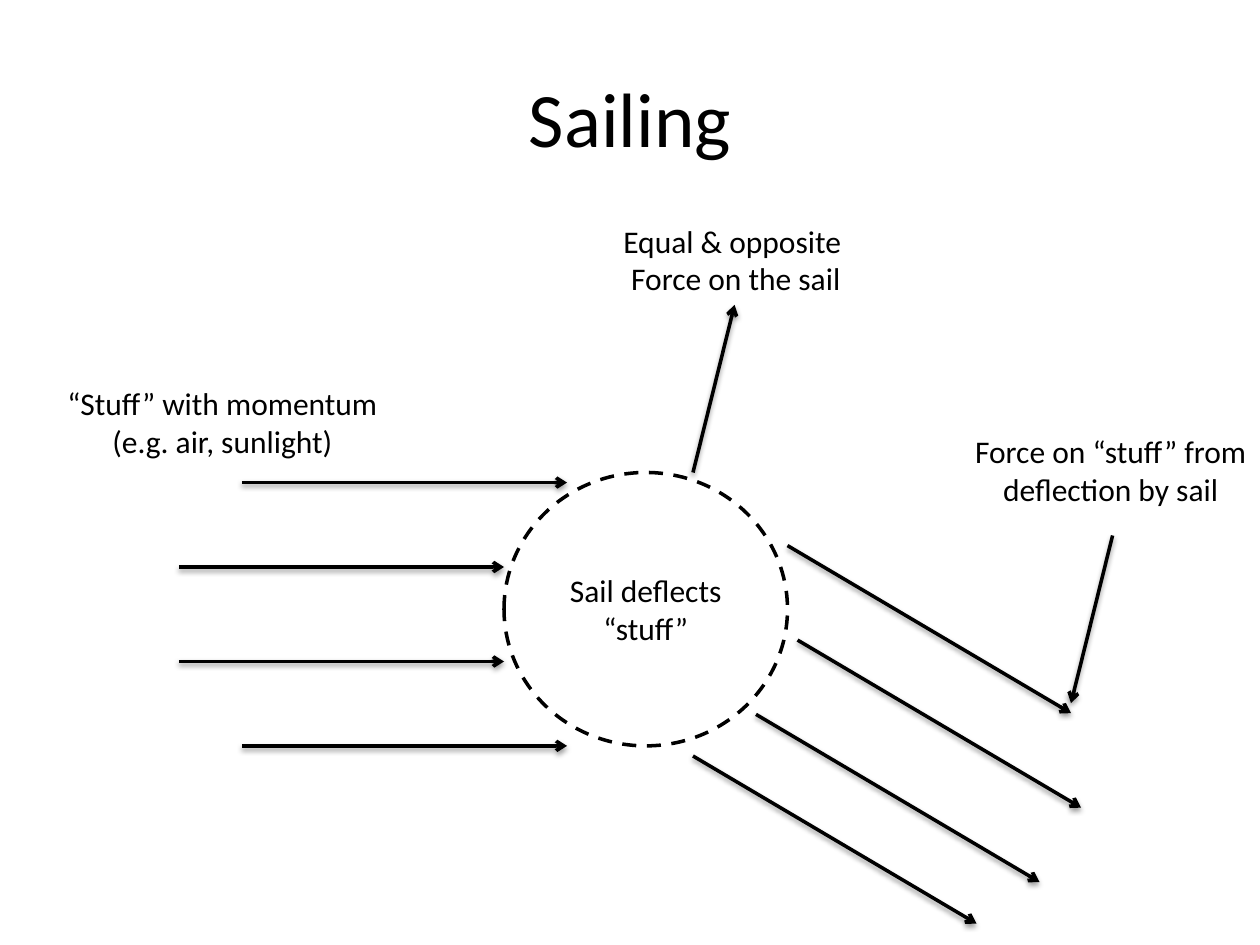
from lxml import etree
from pptx import Presentation
from pptx import util as u
from pptx.dml.color import RGBColor
from pptx.enum import dml, shapes, text
from pptx.oxml import ns

BLACK = RGBColor(0x00, 0x00, 0x00)
WHITE = RGBColor(0xFF, 0xFF, 0xFF)
FONT = "Calibri"
LINE_WIDTH = u.Pt(2)


def add_element(parent, tag, **attributes):
    """Append a DrawingML element to its parent."""
    return etree.SubElement(parent, ns.qn(tag), **attributes)


def format_text(frame, size):
    """Centre every paragraph and give it the slide's font."""
    for paragraph in frame.paragraphs:
        paragraph.alignment = text.PP_ALIGN.CENTER
        for run in paragraph.runs:
            run.font.name = FONT
            run.font.size = u.Pt(size)
            run.font.color.rgb = BLACK


def add_title(slide, left, top, width, height):
    """Place and format the title placeholder."""
    title = slide.shapes.title
    title.left, title.top = u.Inches(left), u.Inches(top)
    title.width, title.height = u.Inches(width), u.Inches(height)
    title.text_frame.text = "Sailing"
    title.text_frame.vertical_anchor = text.MSO_ANCHOR.MIDDLE
    format_text(title.text_frame, 44)


def add_label(slide, left, top, width, wording, wrap=True):
    """Add a centred two-line label."""
    label = slide.shapes.add_textbox(
        u.Inches(left), u.Inches(top), u.Inches(width), u.Inches(0.71))
    frame = label.text_frame
    frame.text = wording
    frame.word_wrap = wrap
    frame.auto_size = text.MSO_AUTO_SIZE.SHAPE_TO_FIT_TEXT
    format_text(frame, 18)


def add_arrow(slide, left, top, across, down):
    """Add a shadowed arrow from a start point by an offset."""
    arrow = slide.shapes.add_connector(
        shapes.MSO_CONNECTOR.STRAIGHT, u.Inches(left), u.Inches(top),
        u.Inches(left + across), u.Inches(top + down))
    arrow.line.color.rgb = BLACK
    arrow.line.width = LINE_WIDTH
    properties = arrow._element.spPr
    add_element(properties.find(ns.qn("a:ln")), "a:tailEnd", type="arrow")
    effects = add_element(properties, "a:effectLst")
    shadow = add_element(
        effects, "a:outerShdw", blurRad=str(u.Pt(3.1)), dist=str(u.Pt(1.6)),
        dir="5400000", rotWithShape="0")
    color = add_element(shadow, "a:srgbClr", val=str(BLACK))
    add_element(color, "a:alpha", val="38000")


def add_sail(slide, left, top, width, height):
    """Add the dashed circle that stands for the sail."""
    sail = slide.shapes.add_shape(
        shapes.MSO_SHAPE.OVAL, u.Inches(left), u.Inches(top),
        u.Inches(width), u.Inches(height))
    sail.shadow.inherit = False
    sail.fill.solid()
    sail.fill.fore_color.rgb = WHITE
    sail.line.color.rgb = BLACK
    sail.line.width = LINE_WIDTH
    sail.line.dash_style = dml.MSO_LINE.DASH
    sail.text_frame.text = "Sail deflects\n“stuff”"
    sail.text_frame.vertical_anchor = text.MSO_ANCHOR.MIDDLE
    format_text(sail.text_frame, 18)


def add_incoming(slide, left, top):
    """Add the arrows that arrive at the sail and their label."""
    for indent, drop in ((1.5, 0.83), (1, 1.5), (1, 2.25), (1.5, 2.92)):
        add_arrow(slide, left + indent, top + drop, 2.58, 0)
    add_label(slide, left, top, 2.69,
              "“Stuff” with momentum\n(e.g. air, sunlight)", wrap=False)


def add_deflected(slide, left, top):
    """Add the arrows that leave the sail, the force on them and its label."""
    for indent, drop in ((0.75, 0.95), (0.83, 1.7), (0.5, 2.29), (0, 2.62)):
        add_arrow(slide, left + indent, top + drop, 2.25, 1.33)
    add_arrow(slide, left + 3.33, top + 0.87, -0.33, 1.33)
    add_label(slide, left + 1.97, top, 2.69,
              "Force on “stuff” from deflection by sail")


def add_reaction(slide, left, top):
    """Add the force on the sail and its label."""
    add_arrow(slide, left + 1.08, top + 2.04, 0.33, -1.33)
    add_label(slide, left, top, 2.84, "Equal & opposite \nForce on the sail")


def main():
    """Build and save the slide."""
    presentation = Presentation()
    presentation.slide_width = u.Inches(10)
    presentation.slide_height = u.Inches(7.5)
    slide = presentation.slides.add_slide(presentation.slide_layouts[5])
    add_title(slide, 0.5, 0.3, 9, 1.25)
    add_sail(slide, 4, 3.75, 2.25, 2.17)
    add_incoming(slide, 0.42, 3)
    add_deflected(slide, 5.5, 3.38)
    add_reaction(slide, 4.42, 1.71)
    presentation.save("out.pptx")


if __name__ == "__main__":
    main()
